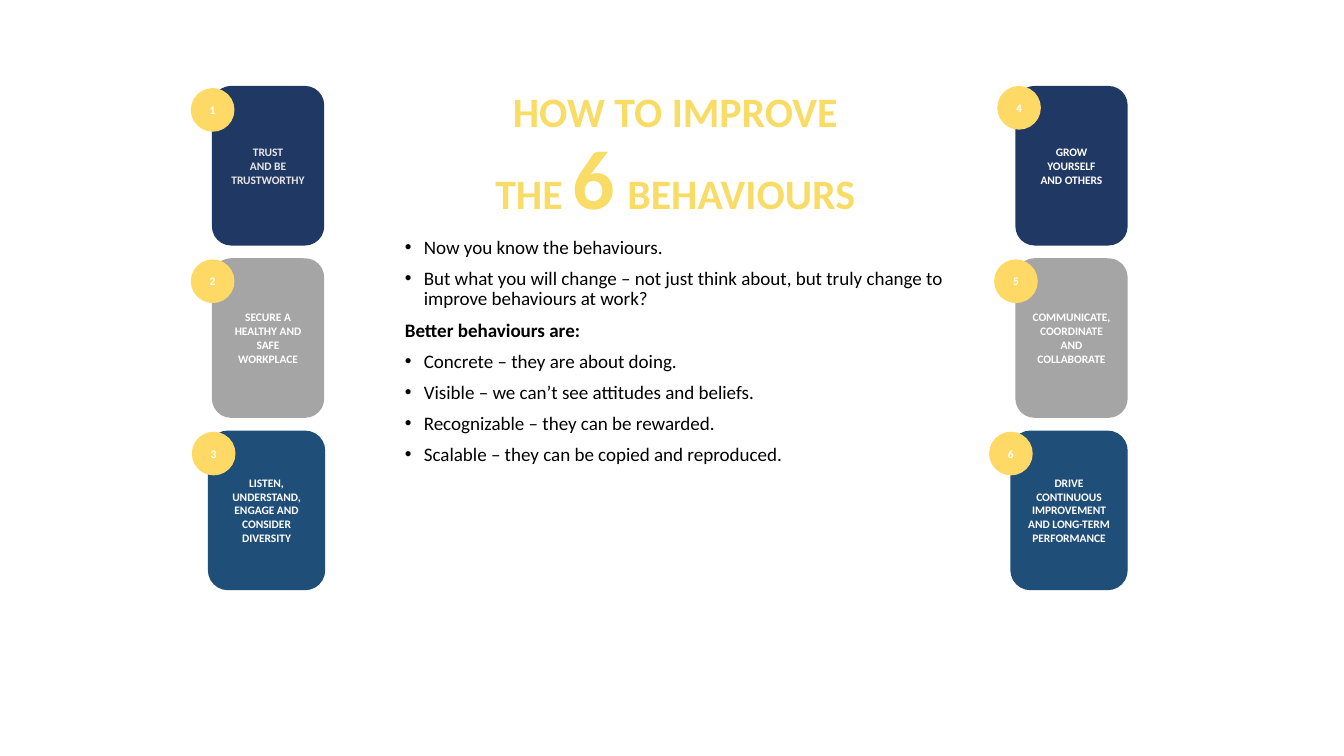
"""Build the slide on how to improve the six behaviours."""
import pptx
import pptx.dml.color
import pptx.enum.shapes
import pptx.enum.text
import pptx.oxml.ns
import pptx.util
from lxml import etree

Pt = pptx.util.Pt
RGBColor = pptx.dml.color.RGBColor
MSO_SHAPE = pptx.enum.shapes.MSO_SHAPE
PP_ALIGN = pptx.enum.text.PP_ALIGN
MSO_ANCHOR = pptx.enum.text.MSO_ANCHOR

NAVY = RGBColor(0x20, 0x38, 0x64)
GREY = RGBColor(0xA5, 0xA5, 0xA5)
BLUE = RGBColor(0x1F, 0x4E, 0x79)
GOLD = RGBColor(0xFF, 0xD9, 0x66)
YELLOW = RGBColor(0xF9, 0xDC, 0x66)
PALE = RGBColor(0xE7, 0xE6, 0xE6)
WHITE = RGBColor(0xFF, 0xFF, 0xFF)
BLACK = RGBColor(0, 0, 0)


def add_text(p, text, size=8.2, color=WHITE, bold=True):
    for i, line in enumerate(text.split("\n")):
        if i:
            p.add_line_break()
        r = p.add_run()
        r.text = line
        r.font.name = "Calibri"
        r.font.size = Pt(size)
        r.font.bold = bold
        r.font.color.rgb = color


def add_label(s, kind, box, fill, text, color=WHITE):
    sp = s.shapes.add_shape(kind, *[Pt(v) for v in box])
    sp.shadow.inherit = False
    sp.fill.solid()
    sp.fill.fore_color.rgb = fill
    sp.line.color.rgb = fill
    sp.line.width = Pt(1)
    tf = sp.text_frame
    tf.word_wrap = True
    tf.vertical_anchor = MSO_ANCHOR.MIDDLE
    for i, part in enumerate(text.split("\n\n")):
        p = tf.add_paragraph() if i else tf.paragraphs[0]
        p.alignment = PP_ALIGN.CENTER
        add_text(p, part, color=color)


prs = pptx.Presentation()
prs.slide_width, prs.slide_height = Pt(960), Pt(540)
s = prs.slides.add_slide(prs.slide_layouts[6])

tf = s.shapes.add_textbox(Pt(282.2), Pt(61.9), Pt(400.3), Pt(412.6)).text_frame
tf.word_wrap = True
p = tf.paragraphs[0]
p.alignment = PP_ALIGN.CENTER
p.line_spacing = 0.9
title = [("HOW TO IMPROVE\nTHE ", 29.9), ("6", 59.9), (" ", 39.9), ("BEHAVIOURS", 29.9)]
for text, size in title:
    add_text(p, text, size=size, color=YELLOW)

body = [
    ("Now you know the behaviours.", True),
    ("But what you will change – not just think about, but truly change to "
     "improve behaviours at work?", True),
    ("Better behaviours are:", False),
    ("Concrete – they are about doing.", True),
    ("Visible – we can’t see attitudes and beliefs.", True),
    ("Recognizable – they can be rewarded.", True),
    ("Scalable – they can be copied and reproduced.", True),
]
for text, bulleted in body:
    p = tf.add_paragraph()
    p.line_spacing = 0.9
    p.space_before = Pt(7.5)
    if bulleted:
        pPr = p._p.get_or_add_pPr()
        pPr.set("marL", str(Pt(13.5)))
        pPr.set("indent", str(-Pt(13.5)))
        font = etree.SubElement(pPr, pptx.oxml.ns.qn("a:buFont"))
        font.set("typeface", "Arial")
        bullet = etree.SubElement(pPr, pptx.oxml.ns.qn("a:buChar"))
        bullet.set("char", "•")
    add_text(p, text, size=13.6, color=BLACK, bold=not bulleted)

CARD_TOP, CARD_HEIGHT, CARD_STEP, BADGE = 61.9, 113, 123.1, 30.2
row_styles = [(NAVY, 79.2), (GREY, 79.2), (BLUE, 82.8)]
behaviours = [
    ("TRUST\nAND BE TRUSTWORTHY", PALE, 151.9, 136.8, 63.4),
    ("SECURE A HEALTHY AND SAFE WORKPLACE", WHITE, 151.9, 136.8, 185.8),
    ("LISTEN, UNDERSTAND, ENGAGE AND CONSIDER DIVERSITY", WHITE, 149, 137.5, 308.9),
    ("GROW YOURSELF\nAND OTHERS", WHITE, 725.8, 712.8, 61.9),
    ("COMMUNICATE, COORDINATE AND COLLABORATE", WHITE, 725.8, 710.6, 185.8),
    ("DRIVE CONTINUOUS IMPROVEMENT\n\nAND LONG-TERM PERFORMANCE", WHITE, 722.2, 707, 308.9),
]
for i, (text, color, left, badge_left, badge_top) in enumerate(behaviours):
    row = i % 3
    fill, width = row_styles[row]
    card = (left, CARD_TOP + row * CARD_STEP, width, CARD_HEIGHT)
    add_label(s, MSO_SHAPE.ROUNDED_RECTANGLE, card, fill, text, color)
    badge = (badge_left, badge_top, BADGE, BADGE)
    add_label(s, MSO_SHAPE.OVAL, badge, GOLD, str(i + 1))

prs.save("out.pptx")
